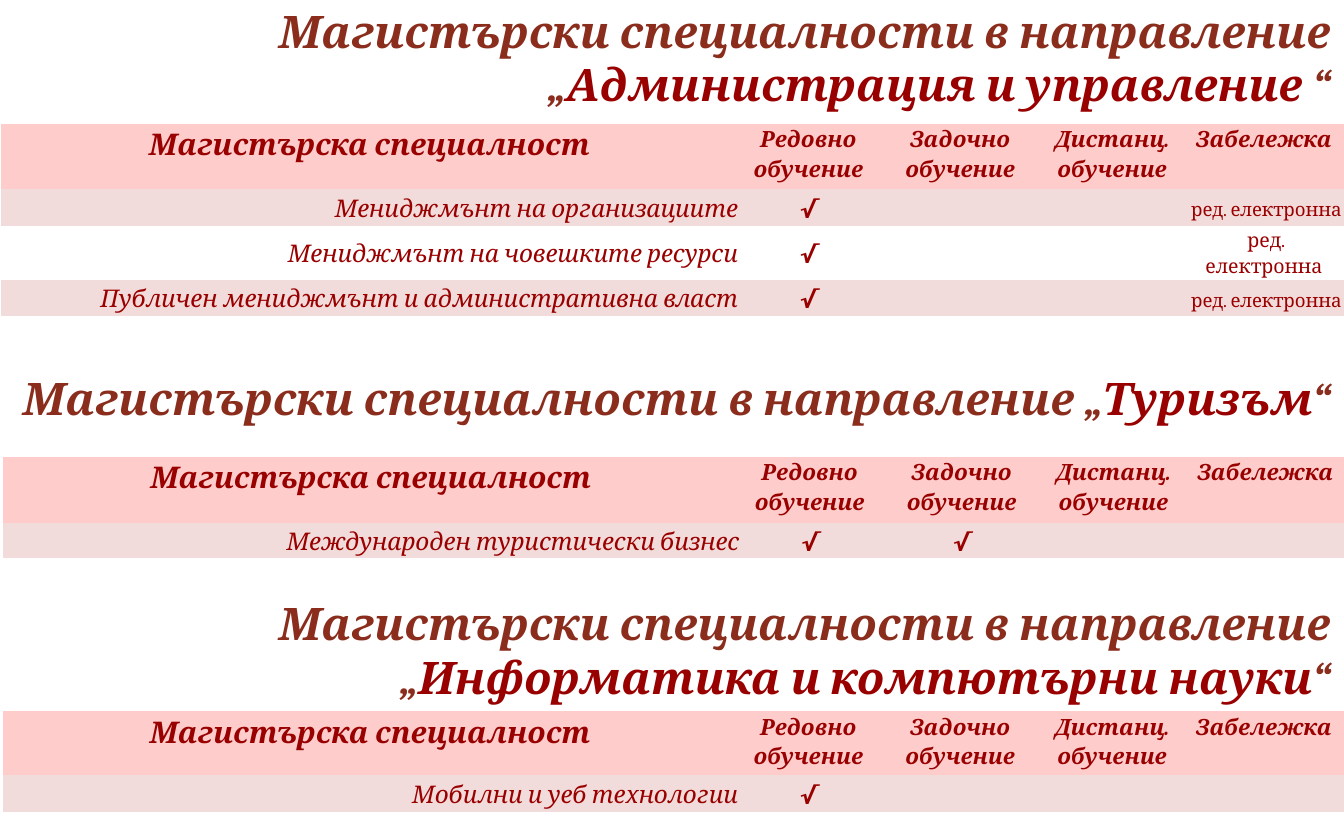
from lxml.etree import SubElement
from pptx import Presentation
from pptx.dml.color import RGBColor
from pptx.enum.text import MSO_ANCHOR, PP_ALIGN
from pptx.oxml.ns import qn
from pptx.util import Inches, Pt

COLORS = {"brown": "8B2D1D", "red": "990000", "pink": "FFCCCC", "rose": "F2DCDB"}
FONT = "Cambria"
NO_GRID_STYLE = "{2D5ABB26-0587-4C30-8999-92F81FD0307C}"
HEADERS = [
    ["Магистърска специалност"],
    ["Редовно", "обучение"],
    ["Задочно обучение"],
    ["Дистанц. обучение"],
    ["Забележка"],
]
CHECK = "√"
NOTE = [(" ", 12), ("ред. електронна", 10)]
WRAPPED_NOTE = [(" ред. електронна", 10.5)]

SECTIONS = [
    {"field": "Администрация и управление ", "title_top": -0.03,
     "at": (0.01, 0.92), "first_col": 5.48, "heights": (0.49, 0.27),
     "rows": [("Мениджмънт на организациите", CHECK, "", NOTE),
              ("Мениджмънт на човешките ресурси", CHECK, "", WRAPPED_NOTE),
              ("Публичен мениджмънт и административна власт", CHECK, "", NOTE)]},
    {"field": "Туризъм", "title_top": 2.5,
     "at": (0.02, 3.4), "first_col": 5.48, "heights": (0.49, 0.26),
     "rows": [("Международен туристически бизнес", CHECK, CHECK, [])]},
    {"field": "Информатика и компютърни науки", "title_top": 4.38,
     "at": (0.02, 5.29), "first_col": 5.47, "heights": (0.48, 0.27),
     "rows": [("Мобилни и уеб технологии", CHECK, "", [])]},
]


class Deck:
    """Holds the slide and its text and table style."""

    def __init__(self, prs):
        self.s = prs.slides.add_slide(prs.slide_layouts[6])

    def run(self, p, text, size, color="red", bold=True, italic=True):
        """Add one styled run to a paragraph."""
        r = p.add_run()
        r.text = text
        r.font.name = FONT
        r.font.size = Pt(size)
        r.font.bold = bold
        r.font.italic = italic
        r.font.color.rgb = RGBColor.from_string(COLORS[color])

    def title(self, top, field):
        """Add a right-aligned section title."""
        sp = self.s.shapes.add_textbox(Inches(0), Inches(top), Inches(10), Inches(0.91))
        tf = sp.text_frame
        tf.word_wrap = True
        tf.vertical_anchor = MSO_ANCHOR.MIDDLE
        p = tf.paragraphs[0]
        p.alignment = PP_ALIGN.RIGHT
        self.run(p, "Магистърски специалности в направление „", 24, "brown")
        self.run(p, field, 24)
        self.run(p, "“", 24, "brown")

    def cell(self, cell, lines, fill=None, align=PP_ALIGN.CENTER,
             anchor=MSO_ANCHOR.MIDDLE, **style):
        """Fill a cell with paragraphs, each a list of (text, size) runs."""
        cell.margin_left = cell.margin_right = cell.margin_top = cell.margin_bottom = 0
        cell.vertical_anchor = anchor
        if fill:
            cell.fill.solid()
            cell.fill.fore_color.rgb = RGBColor.from_string(COLORS[fill])
        else:
            cell.fill.background()
        tf = cell.text_frame
        for i, runs in enumerate(lines):
            p = tf.add_paragraph() if i else tf.paragraphs[0]
            p.alignment = align
            p.line_spacing = 1.15
            for text, size in runs:
                self.run(p, text, size, **style)
            if not runs:
                SubElement(p._p, qn("a:endParaRPr"), sz="1000")

    def table(self, at, first_col, heights, rows):
        """Add a table of specialities under its header row."""
        widths = [first_col, 1.05, 1.21, 1.05, 1.21]
        row_heights = [heights[0]] + [heights[1]] * len(rows)
        table = self.s.shapes.add_table(
            len(row_heights), len(widths), Inches(at[0]), Inches(at[1]),
            Inches(sum(widths)), Inches(sum(row_heights))).table
        table.first_row = table.horz_banding = False
        table._tbl.tblPr.find(qn("a:tableStyleId")).text = NO_GRID_STYLE
        for column, width in zip(table.columns, widths):
            column.width = Inches(width)
        for row, height in zip(table.rows, row_heights):
            row.height = Inches(height)
        for c, header in enumerate(HEADERS):
            size = 12 if c else 16
            self.cell(table.cell(0, c), [[(line, size)] for line in header],
                      "pink", anchor=MSO_ANCHOR.TOP)
        for i, (name, full_time, part_time, note) in enumerate(rows, 1):
            fill = "rose" if i % 2 else None
            self.cell(table.cell(i, 0), [[(name, 13)]], fill, PP_ALIGN.RIGHT, bold=False)
            for c, mark in enumerate((full_time, part_time, ""), 1):
                self.cell(table.cell(i, c), [[(mark, 13)] if mark else []], fill)
            self.cell(table.cell(i, 4), [note], fill, bold=False, italic=False)


def main():
    prs = Presentation()
    prs.slide_width, prs.slide_height = Inches(10), Inches(6.25)
    deck = Deck(prs)
    for section in SECTIONS:
        deck.title(section["title_top"], section["field"])
        deck.table(section["at"], section["first_col"], section["heights"], section["rows"])
    prs.save("out.pptx")


if __name__ == "__main__":
    main()
